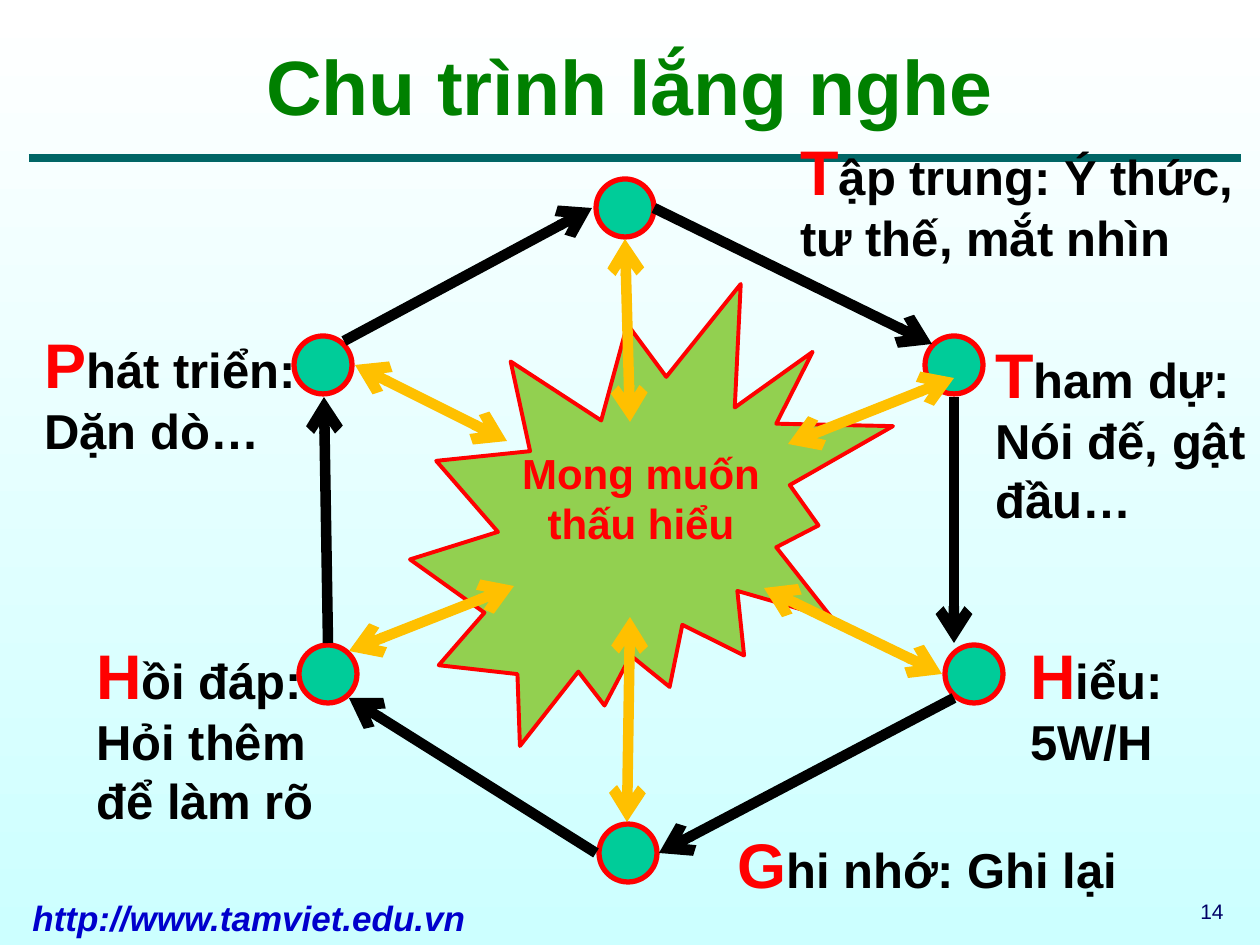
from dataclasses import dataclass
from typing import NamedTuple

from lxml.etree import SubElement
from pptx import Presentation
from pptx.dml.color import RGBColor
from pptx.enum.shapes import MSO_CONNECTOR as Connector, MSO_SHAPE as Preset
from pptx.enum.text import MSO_ANCHOR as Anchor, MSO_AUTO_SIZE as AutoSize, PP_ALIGN as Align
from pptx.oxml.ns import qn
from pptx.util import Emu, Pt

EMU_PER_PX = 914400 / 126
CIRCLE_SIZE = 58
BLACK, RED, AMBER = "000000", "FF0000", "FFC000"


class Box(NamedTuple):
    left: int
    top: int
    width: int
    height: int


class Arrow(NamedTuple):
    x1: int
    y1: int
    x2: int
    y2: int


@dataclass
class Step:
    box: Box
    initial: str
    rest: str
    detail: str = ""


STEPS = [
    Step(Box(788, 126, 475, 149), "T", "ập trung: Ý thức, tư thế, mắt nhìn"),
    Step(Box(983, 329, 294, 208), "T", "ham dự:", "Nói đế, gật đầu…"),
    Step(Box(1018, 630, 242, 149), "H", "iểu: 5W/H"),
    Step(Box(725, 819, 441, 89), "G", "hi nhớ: Ghi lại"),
    Step(Box(84, 630, 294, 208), "H", "ồi đáp:", "Hỏi thêm để làm rõ"),
    Step(Box(32, 319, 294, 149), "P", "hát triển:", "Dặn dò…"),
]
CIRCLES = [(596, 179), (925, 336), (945, 645), (599, 824), (299, 645), (294, 336)]
CYCLE_ARROWS = [
    Arrow(654, 208, 932, 344), Arrow(954, 397, 954, 643), Arrow(954, 698, 659, 853),
    Arrow(596, 853, 349, 698), Arrow(328, 643, 324, 397), Arrow(344, 341, 592, 208),
]
CENTRE_ARROWS = [
    Arrow(627, 822, 630, 617), Arrow(349, 651, 514, 586), Arrow(355, 365, 507, 441),
    Arrow(942, 674, 764, 588), Arrow(630, 422, 625, 239), Arrow(788, 444, 954, 378),
]


def px(value: int) -> Emu:
    return Emu(round(value * EMU_PER_PX))


def color(value: str) -> RGBColor:
    return RGBColor.from_string(value)


def add_run(paragraph, text: str, size: int, fill: str, **styles):
    run = paragraph.add_run()
    run.text = text
    formats = {"name": "Arial", "size": Pt(size), "bold": True, "italic": False} | styles
    for name, value in formats.items():
        setattr(run.font, name, value)
    run.font.color.rgb = color(fill)
    return run


def add_text_box(slide, box: Box, align=Align.LEFT):
    frame = slide.shapes.add_textbox(*map(px, box)).text_frame
    frame.word_wrap = True
    frame.paragraphs[0].alignment = align
    return frame


def add_step(slide, step: Step) -> None:
    frame = add_text_box(slide, step.box)
    add_run(frame.paragraphs[0], step.initial, 36, RED)
    add_run(frame.paragraphs[0], step.rest, 28, BLACK)
    if step.detail:
        add_run(frame.add_paragraph(), step.detail, 28, BLACK)


def add_preset(slide, preset: Preset, box: Box, fill: str, width: float) -> None:
    shape = slide.shapes.add_shape(preset, *map(px, box))
    shape.shadow.inherit = False
    shape.fill.solid()
    shape.fill.fore_color.rgb = color(fill)
    shape.line.color.rgb = color(RED)
    shape.line.width = Pt(width)


def add_line(slide, ends: Arrow, fill: str, width: float, heads: tuple[str, ...] = ()) -> None:
    connector = slide.shapes.add_connector(Connector.STRAIGHT, *map(px, ends))
    connector.line.color.rgb = color(fill)
    connector.line.width = Pt(width)
    properties = connector._element.spPr
    for head in heads:
        SubElement(properties.find(qn("a:ln")), qn(f"a:{head}"), type="arrow")
    SubElement(properties, qn("a:effectLst"))


def add_title(slide, text: str) -> None:
    title = slide.shapes.title
    for name, value in zip(Box._fields, Box(0, 32, 1260, 106)):
        setattr(title, name, px(value))
    formats = {"word_wrap": True, "auto_size": AutoSize.NONE, "vertical_anchor": Anchor.TOP}
    for name, value in formats.items():
        setattr(title.text_frame, name, value)
    paragraph = title.text_frame.paragraphs[0]
    paragraph.alignment = Align.CENTER
    run = add_run(paragraph, text, 44, "008000")
    effects = run.font._element.makeelement(qn("a:effectLst"), {})
    run.font._element.find(qn("a:solidFill")).addnext(effects)
    shadow = SubElement(effects, qn("a:outerShdw"), dist="38100", dir="2700000", algn="tl")
    SubElement(shadow, qn("a:srgbClr"), val="4D4D4D")


def set_background(slide) -> None:
    fill = slide.background.fill
    fill.gradient()
    fill.gradient_angle = 270
    for stop, value in zip(fill.gradient_stops, ("FFFFFF", "CCFFFF")):
        stop.color.rgb = color(value)


def main() -> None:
    presentation = Presentation()
    presentation.slide_width, presentation.slide_height = px(1260), px(945)
    slide = presentation.slides.add_slide(presentation.slide_layouts[5])
    set_background(slide)
    add_title(slide, "Chu trình lắng nghe")
    add_line(slide, Arrow(29, 158, 1241, 158), "006666", 4.5)

    address = add_text_box(slide, Box(20, 890, 699, 55))
    add_run(address.paragraphs[0], "http://www.tamviet.edu.vn", 20, "0000CC", italic=True)
    number = add_text_box(slide, Box(939, 892, 297, 42), Align.RIGHT)
    add_run(number.paragraphs[0], "14", 12, "000066", bold=False)

    for step in STEPS:
        add_step(slide, step)
    for left, top in CIRCLES:
        add_preset(slide, Preset.OVAL, Box(left, top, CIRCLE_SIZE, CIRCLE_SIZE), "00CC99", 3)
    for arrow in CYCLE_ARROWS:
        add_line(slide, arrow, BLACK, 6, ("tailEnd",))

    add_preset(slide, Preset.EXPLOSION2, Box(410, 284, 483, 462), "92D050", 2.25)
    centre = add_text_box(slide, Box(494, 441, 294, 113), Align.CENTER)
    add_run(centre.paragraphs[0], "Mong muốn thấu hiểu", 24, RED)
    for arrow in CENTRE_ARROWS:
        add_line(slide, arrow, AMBER, 6, ("headEnd", "tailEnd"))

    presentation.save("out.pptx")


if __name__ == "__main__":
    main()
